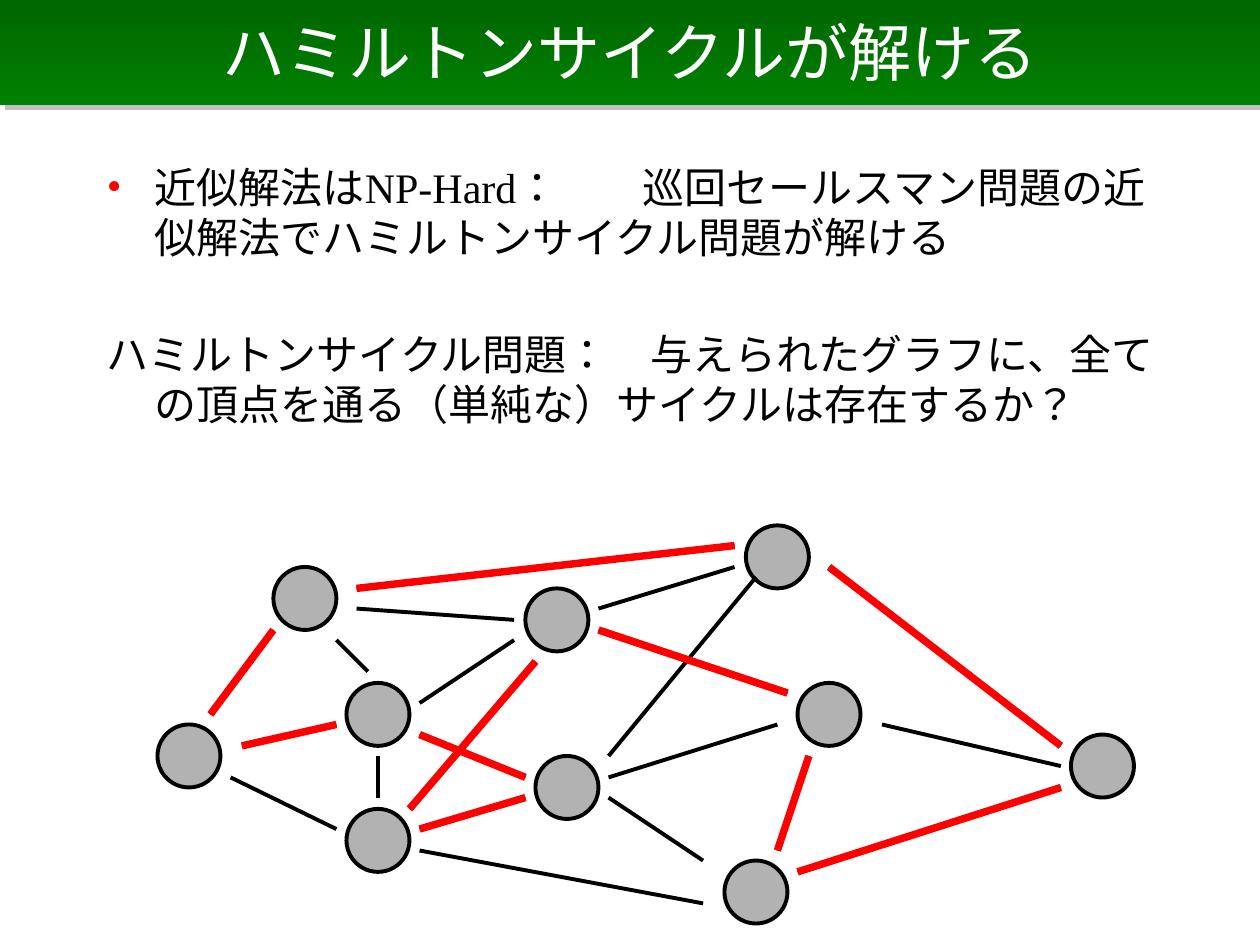
"""Build the slide that reduces the Hamiltonian cycle problem to approximate TSP."""
from dataclasses import dataclass

from lxml import etree
from pptx import Presentation
from pptx.dml.color import RGBColor
from pptx.enum.lang import MSO_LANGUAGE_ID
from pptx.enum.shapes import MSO_CONNECTOR, MSO_SHAPE
from pptx.enum.text import MSO_ANCHOR, PP_ALIGN
from pptx.oxml import parse_xml
from pptx.oxml.ns import nsdecls, qn
from pptx.util import Inches, Pt

RECT, OVAL = MSO_SHAPE.RECTANGLE, MSO_SHAPE.OVAL
STRAIGHT = MSO_CONNECTOR.STRAIGHT
CENTER, LEFT = PP_ALIGN.CENTER, PP_ALIGN.LEFT
MIDDLE = MSO_ANCHOR.MIDDLE
JAPANESE = MSO_LANGUAGE_ID.JAPANESE


@dataclass(frozen=True)
class Theme:
    font: str = "Times New Roman"
    title_size: float = 36
    body_size: float = 24
    edge_width: float = 2.25
    cycle_width: float = 4.25
    text: str = "000000"
    title: str = "FFFFFF"
    accent: str = "FF0000"
    node: str = "B2B2B2"
    bar_top: str = "006600"
    bar_bottom: str = "008000"
    shadow: str = "808080"


NODE_SIZE = 0.5
NODES = [
    (4.17, 4.67), (4.25, 6), (5.75, 6.83), (6.33, 5.42), (5.92, 4.17),
    (1.25, 5.75), (8.5, 5.83), (2.17, 4.5), (2.75, 5.42), (2.75, 6.42),
]
CYCLE_EDGES = [
    (6.58, 4.5, 8.42, 5.92), (6.33, 6.92, 8.42, 6.25),
    (6.42, 6, 6.17, 6.75), (4.75, 5, 6.25, 5.5),
    (4.25, 5.25, 3.25, 6.42), (3.33, 6.58, 4.17, 6.33),
    (3.33, 5.83, 4.17, 6.17), (1.92, 5.92, 2.67, 5.75),
    (1.67, 5.67, 2.17, 5), (2.83, 4.67, 5.83, 4.33),
]
OTHER_EDGES = [
    (2.83, 4.83, 4.08, 4.92), (3.33, 5.58, 4.08, 5.08),
    (3.33, 6.75, 5.58, 7.17), (4.75, 4.83, 5.83, 4.5),
    (4.83, 6.17, 6.17, 5.75), (4.83, 6.33, 5.58, 6.83),
    (1.83, 6.17, 2.67, 6.58), (7, 5.75, 8.42, 6.08),
    (4.83, 6, 6, 4.58), (3, 6.33, 3, 6), (2.92, 5.33, 2.67, 5.08),
]
PARAGRAPHS = [
    ("近似解法はNP-Hard：　　巡回セールスマン問題の近似解法でハミルトンサイクル問題が解ける", True, 0),
    ("ハミルトンサイクル問題：　与えられたグラフに、全ての頂点を通る（単純な）サイクルは存在するか？", False, 38),
]


def write(p, text, *, font, size, color, align=LEFT, before=0):
    p.alignment = align
    p.space_before = Pt(before)
    r = p.add_run()
    r.text = text
    r.font.name = font
    r.font.size = Pt(size)
    r.font.language_id = JAPANESE
    r.font.color.rgb = RGBColor.from_string(color)


class Deck:
    def __init__(self, theme):
        self.theme = theme
        self.prs = Presentation()
        self.prs.slide_width, self.prs.slide_height = Inches(10), Inches(7.5)
        self.s = self.prs.slides.add_slide(self.prs.slide_layouts[6])

    def title(self, text, x, y, w, h):
        t = self.theme
        sp = self.s.shapes.add_shape(RECT, Inches(x), Inches(y), Inches(w), Inches(h))
        sp.line.fill.background()
        sp.fill.gradient()
        sp.fill.gradient_angle = 270
        for stop, color in zip(sp.fill.gradient_stops, (t.bar_top, t.bar_bottom)):
            stop.color.rgb = RGBColor.from_string(color)
        sp._element.spPr.append(parse_xml(
            f'<a:effectLst {nsdecls("a")}><a:outerShdw dist="{Pt(4.2)}" dir="2700000" '
            f'algn="ctr" rotWithShape="0"><a:srgbClr val="{t.shadow}">'
            '<a:alpha val="50000"/></a:srgbClr></a:outerShdw></a:effectLst>'))
        sp.text_frame.vertical_anchor = MIDDLE
        write(sp.text_frame.paragraphs[0], text, font=t.font, size=t.title_size,
              color=t.title, align=CENTER)

    def body(self, paragraphs, x, y, w, h):
        t = self.theme
        tf = self.s.shapes.add_textbox(Inches(x), Inches(y), Inches(w), Inches(h)).text_frame
        tf.word_wrap = True
        for i, (text, bulleted, before) in enumerate(paragraphs):
            p = tf.add_paragraph() if i else tf.paragraphs[0]
            write(p, text, font=t.font, size=t.body_size, color=t.text, before=before)
            pPr = p._p.get_or_add_pPr()
            pPr.set("marL", str(Inches(0.38)))
            pPr.set("indent", str(Inches(-0.38)))
            if bulleted:
                color = etree.SubElement(pPr, qn("a:buClr"))
                etree.SubElement(color, qn("a:srgbClr"), val=t.accent)
                etree.SubElement(pPr, qn("a:buFont"), typeface=t.font)
                etree.SubElement(pPr, qn("a:buChar"), char="•")

    def node(self, x, y):
        t = self.theme
        sp = self.s.shapes.add_shape(OVAL, Inches(x), Inches(y),
                                     Inches(NODE_SIZE), Inches(NODE_SIZE))
        sp.shadow.inherit = False
        sp.fill.solid()
        sp.fill.fore_color.rgb = RGBColor.from_string(t.node)
        sp.line.color.rgb = RGBColor.from_string(t.text)
        sp.line.width = Pt(t.edge_width)

    def edge(self, points, color, width):
        line = self.s.shapes.add_connector(STRAIGHT, *map(Inches, points))
        line.line.color.rgb = RGBColor.from_string(color)
        line.line.width = Pt(width)
        etree.SubElement(line._element.spPr, qn("a:effectLst"))


def main():
    theme = Theme()
    deck = Deck(theme)
    deck.title("ハミルトンサイクルが解ける", 0, -0.01, 10, 0.84)
    deck.body(PARAGRAPHS, 0.75, 1.23, 8.58, 3.58)
    for x, y in NODES:
        deck.node(x, y)
    for points in OTHER_EDGES + CYCLE_EDGES:
        deck.edge(points, theme.text, theme.edge_width)
    for points in CYCLE_EDGES:
        deck.edge(points, theme.accent, theme.cycle_width)
    deck.prs.save("out.pptx")


if __name__ == "__main__":
    main()
